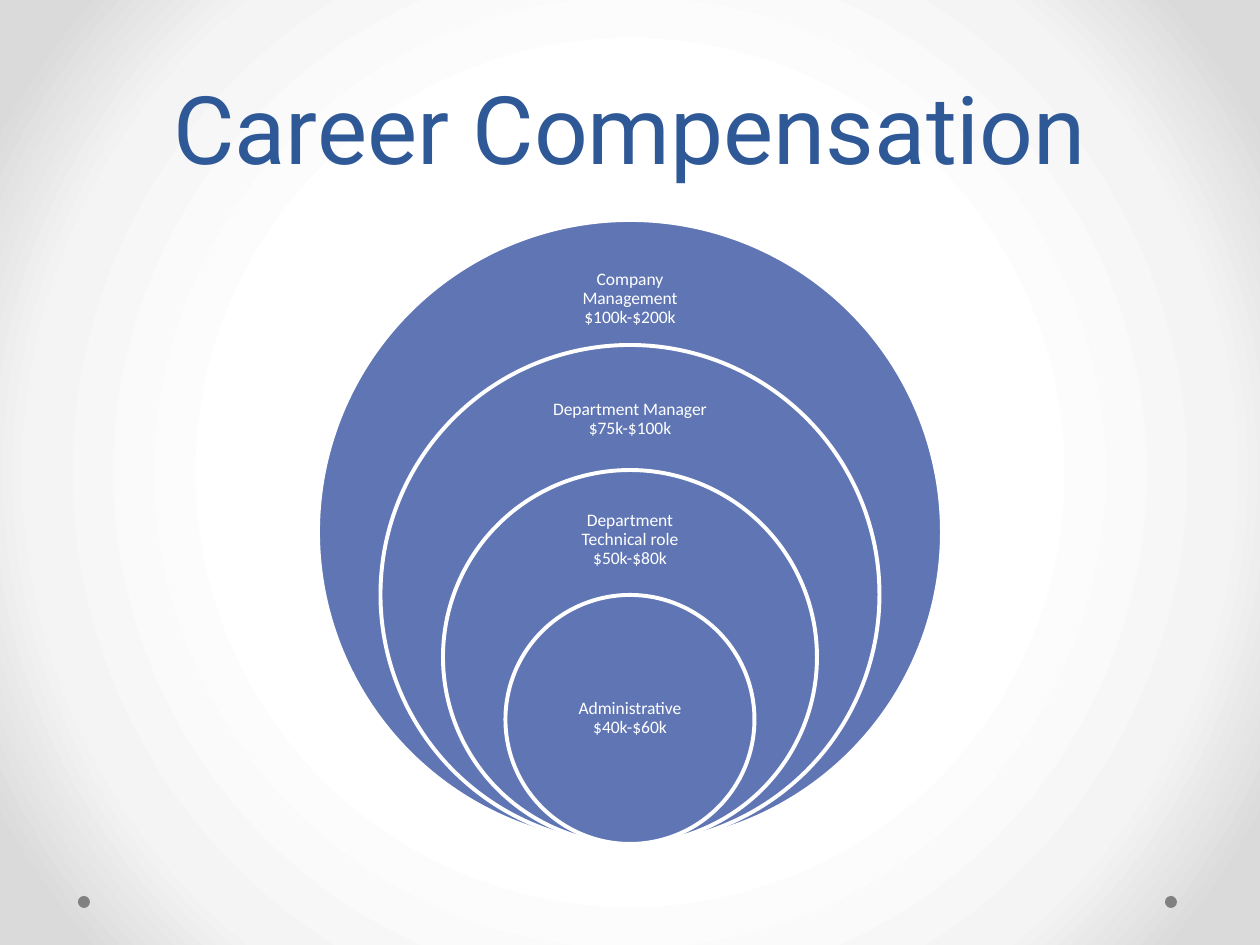
from dataclasses import dataclass

import lxml.etree
import pptx
import pptx.dml.color
import pptx.enum.shapes
import pptx.enum.text
import pptx.oxml
import pptx.oxml.ns
import pptx.util

EMU_PER_PX = 914400 / 126
COLORS = {
    "white": "FFFFFF",
    "mist": "F4F4F4",
    "silver": "DADADA",
    "dot": "808080",
    "level": "6076B4",
    "title": "2F5897",
}
CENTER_X = 630
RINGS_BOTTOM = 844
OUTER_DIAMETER = 624
DIAMETER_STEP = 125
LABEL_WIDTH = 174


@dataclass(frozen=True)
class CareerLevel:
    label: str
    label_top: int
    label_height: int


CAREER_LEVELS = [
    CareerLevel("Company\vManagement\v$100k-$200k", 252, 93),
    CareerLevel("Department Manager\v$75k-$100k", 375, 89),
    CareerLevel("Department\vTechnical role\v$50k-$80k", 498, 84),
    CareerLevel("Administrative\v$40k-$60k", 656, 125),
]


def px(length: float) -> int:
    return pptx.util.Emu(round(length * EMU_PER_PX))


def rgb(name: str) -> pptx.dml.color.RGBColor:
    return pptx.dml.color.RGBColor.from_string(COLORS[name])


def paint_background(slide) -> None:
    fill = slide.background.fill
    fill.gradient()
    gradient = slide.background._cSld.find(".//" + pptx.oxml.ns.qn("a:gradFill"))
    stops = "".join(
        f'<a:gs pos="{percent * 1000}"><a:srgbClr val="{COLORS[name]}"/></a:gs>'
        for percent, name in [(50, "white"), (76, "mist"), (92, "silver")]
    )
    radial = pptx.oxml.parse_xml(
        f'<a:gradFill {pptx.oxml.ns.nsdecls("a")} rotWithShape="1">'
        f'<a:gsLst>{stops}</a:gsLst><a:path path="circle">'
        '<a:fillToRect l="50000" t="50000" r="50000" b="50000"/>'
        "</a:path></a:gradFill>"
    )
    gradient.getparent().replace(gradient, radial)


def add_circle(slide, left: float, top: float, diameter: int, color: str, outline: str | None = None) -> None:
    circle = slide.shapes.add_shape(
        pptx.enum.shapes.MSO_SHAPE.OVAL, px(left), px(top), px(diameter), px(diameter)
    )
    circle.shadow.inherit = False
    circle.fill.solid()
    circle.fill.fore_color.rgb = rgb(color)
    if outline:
        circle.line.color.rgb = rgb(outline)
        circle.line.width = pptx.util.Pt(2.25)
    else:
        circle.line.fill.background()


def add_text(slide, text: str, *, left: int, top: int, width: int, height: int,
             size: int, font: str, color: str, anchor: str, line_spacing: float,
             inset: int) -> None:
    frame = slide.shapes.add_textbox(px(left), px(top), px(width), px(height)).text_frame
    frame.word_wrap = True
    frame.vertical_anchor = pptx.enum.text.MSO_ANCHOR[anchor]
    frame.margin_left = frame.margin_right = px(inset)
    frame.margin_top = frame.margin_bottom = px(inset)
    paragraph = frame.paragraphs[0]
    paragraph.text = text
    paragraph.alignment = pptx.enum.text.PP_ALIGN.CENTER
    paragraph.line_spacing = line_spacing
    for run in paragraph.runs:
        run.font.size = pptx.util.Pt(size)
        run.font.name = font
        run.font.color.rgb = rgb(color)


def add_career_level(slide, level: CareerLevel, depth: int) -> None:
    diameter = OUTER_DIAMETER - depth * DIAMETER_STEP
    add_circle(slide, CENTER_X - diameter / 2, RINGS_BOTTOM - diameter, diameter,
               "level", outline="white")
    add_text(slide, level.label, left=CENTER_X - LABEL_WIDTH // 2, top=level.label_top,
             width=LABEL_WIDTH, height=level.label_height, size=10, font="Calibri",
             color="white", anchor="MIDDLE", line_spacing=0.9, inset=10)


def main() -> None:
    deck = pptx.Presentation()
    deck.slide_width, deck.slide_height = px(1260), px(945)
    slide = deck.slides.add_slide(deck.slide_layouts[6])
    paint_background(slide)
    for dot_left in (1165, 78):
        add_circle(slide, dot_left, 896, 12, "dot")
    for depth, level in enumerate(CAREER_LEVELS):
        add_career_level(slide, level, depth)
    add_text(slide, "Career Compensation", left=63, top=21, width=1134, height=168,
             size=54, font="Roboto", color="title", anchor="BOTTOM",
             line_spacing=pptx.util.Pt(58), inset=6)
    deck.save("out.pptx")


if __name__ == "__main__":
    main()
